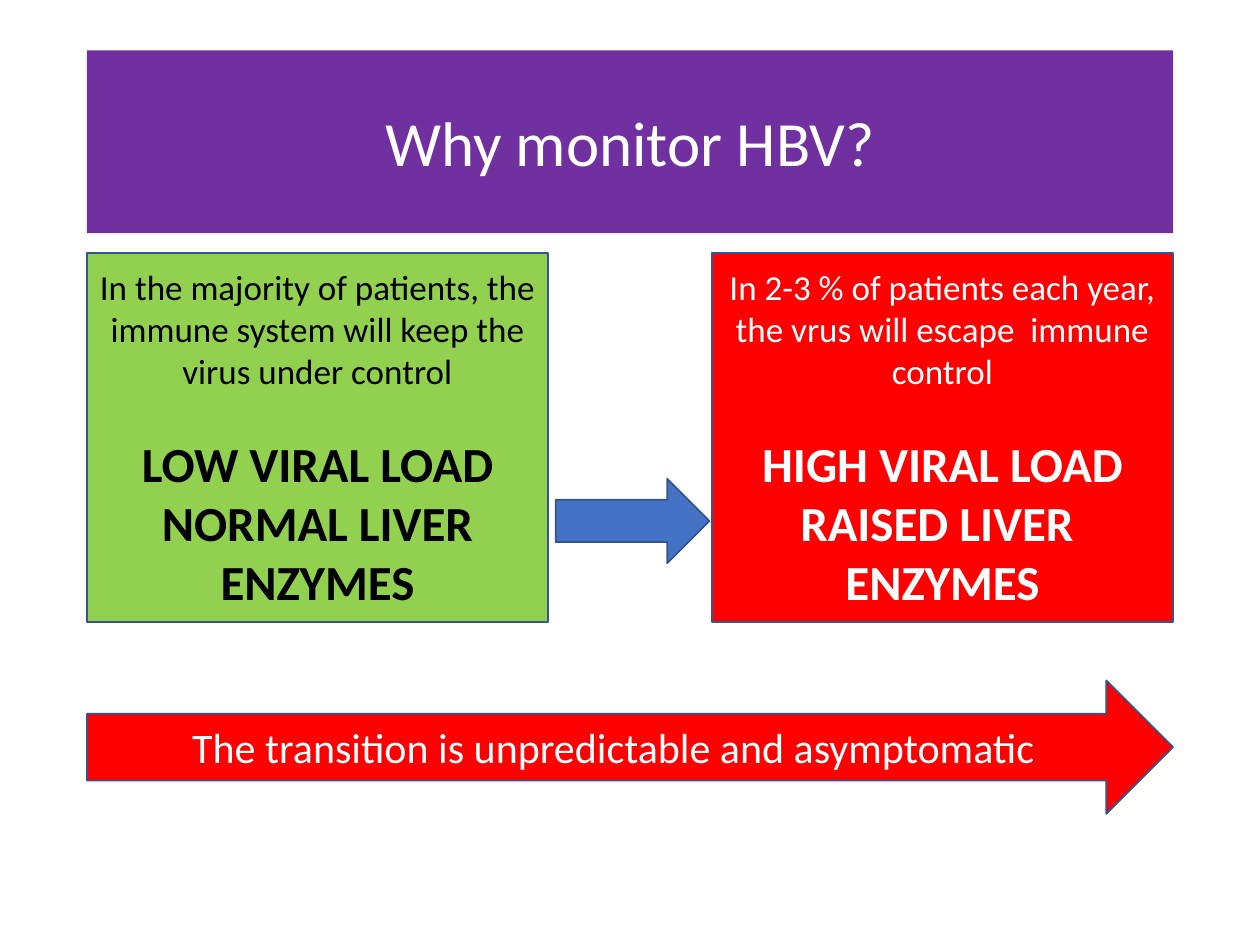
from pptx import Presentation
from pptx.dml.color import RGBColor
from pptx.enum import shapes, text
from pptx.util import Inches, Pt

THEME = {
    "font": "Calibri",
    "purple": "7030A0", "green": "92D050", "red": "FF0000", "blue": "4472C4",
    "edge": "325491", "dark": "000000", "light": "FFFFFF",
    "title": 36, "head": 28, "note": 24, "body": 20, "gap": 24.4,
}
TITLE = "Why monitor HBV?"
CARDS = [
    ("green", "dark",
     "In the majority of patients, the immune system will keep the virus under control",
     ["LOW VIRAL LOAD\nNORMAL LIVER ENZYMES"]),
    ("red", "light",
     "In 2-3 % of patients each year, the vrus will escape  immune control",
     ["HIGH VIRAL LOAD\nRAISED LIVER ", "ENZYMES"]),
]
NOTE = "The transition is unpredictable and asymptomatic"

LEFT, WIDTH = 0.69, 8.62
CARD_W, CARD_H, CARD_TOP = 3.66, 2.93, 2.01
RECT = shapes.MSO_SHAPE.RECTANGLE
ARROW = shapes.MSO_SHAPE.RIGHT_ARROW


def tint(name):
    return RGBColor.from_string(THEME[name])


def draw(slide, kind, box, fill, ink="light", lines=(), edge=True):
    shape = slide.shapes.add_shape(kind, *map(Inches, box))
    shape.shadow.inherit = False
    shape.fill.solid()
    shape.fill.fore_color.rgb = tint(fill)
    if edge:
        shape.line.color.rgb = tint("edge")
        shape.line.width = Pt(1)
    else:
        shape.line.fill.background()
    frame = shape.text_frame
    frame.word_wrap = True
    frame.vertical_anchor = text.MSO_ANCHOR.MIDDLE
    for i, (words, size, bold) in enumerate(lines):
        para = frame.add_paragraph() if i else frame.paragraphs[0]
        para.text = words
        para.alignment = text.PP_ALIGN.CENTER
        for run in para.runs:
            run.font.name = THEME["font"]
            run.font.size = Pt(THEME[size])
            run.font.bold = bold
            run.font.color.rgb = tint(ink)
    return shape


def main():
    deck = Presentation()
    deck.slide_width, deck.slide_height = Inches(10), Inches(7.5)
    slide = deck.slides.add_slide(deck.slide_layouts[6])

    draw(slide, RECT, (LEFT, 0.4, WIDTH, 1.45), "purple",
         lines=[(TITLE, "title", False)], edge=False)

    step = WIDTH - CARD_W
    for i, (fill, ink, body, heads) in enumerate(CARDS):
        lines = [(body, "body", False)] + [(h, "head", True) for h in heads]
        card = draw(slide, RECT, (LEFT + i * step, CARD_TOP, CARD_W, CARD_H),
                    fill, ink, lines)
        card.text_frame.paragraphs[1].space_before = Pt(THEME["gap"])

    draw(slide, ARROW, (4.41, 3.8, 1.22, 0.67), "blue")
    draw(slide, ARROW, (LEFT, 5.4, WIDTH, 1.06), "red",
         lines=[(NOTE, "note", False)])
    deck.save("out.pptx")


if __name__ == "__main__":
    main()
